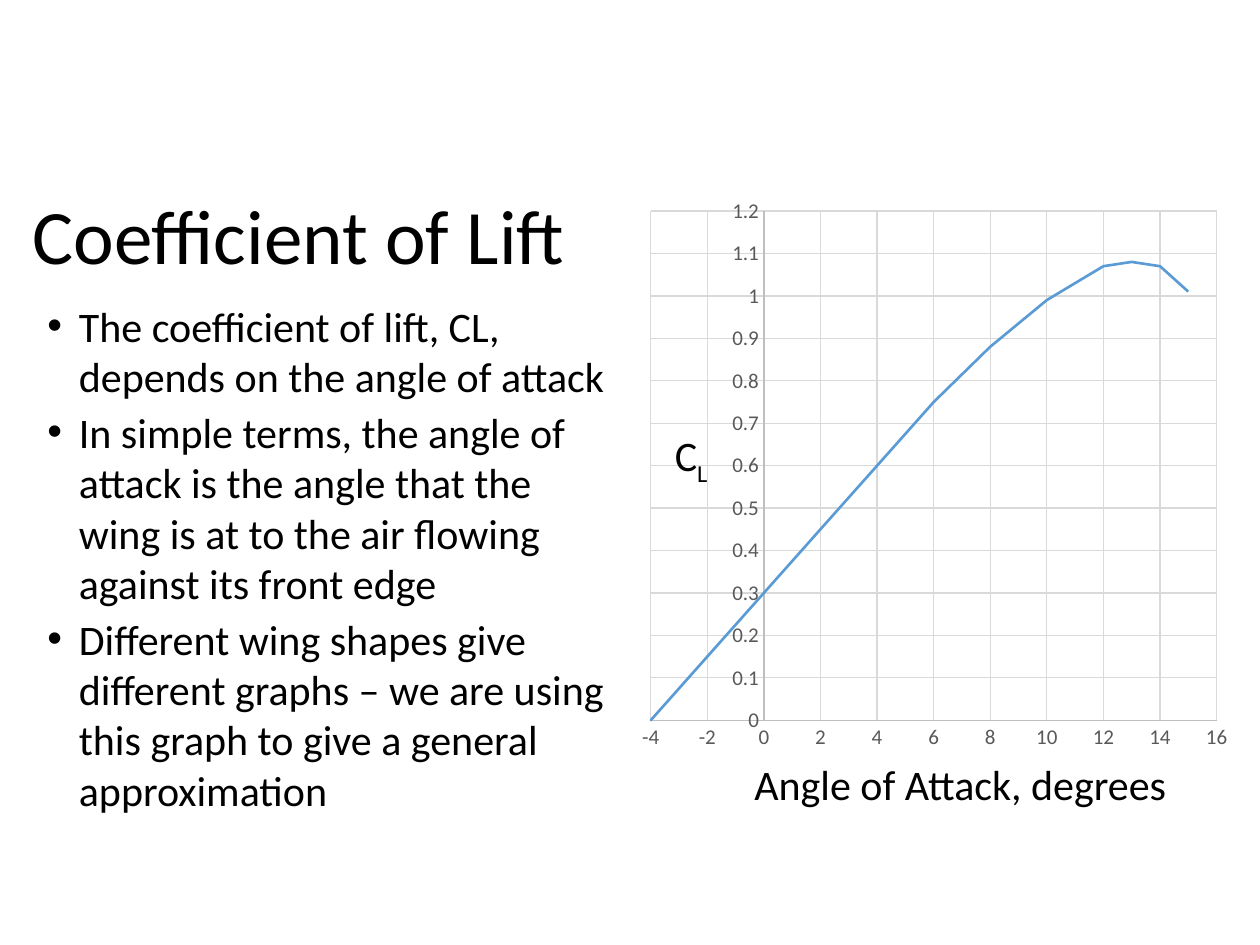
from lxml import etree
from pptx import Presentation
from pptx.chart.data import XyChartData
from pptx.dml.color import RGBColor
from pptx.enum.chart import XL_CHART_TYPE, XL_TICK_MARK
from pptx.enum.text import MSO_ANCHOR
from pptx.oxml import parse_xml
from pptx.oxml.ns import nsdecls, qn
from pptx.util import Pt

SCATTER_LINES = XL_CHART_TYPE.XY_SCATTER_LINES_NO_MARKERS
NO_TICKS = XL_TICK_MARK.NONE
TOP, MIDDLE = MSO_ANCHOR.TOP, MSO_ANCHOR.MIDDLE

BLACK = RGBColor(0x00, 0x00, 0x00)
LABEL_GREY = RGBColor(0x59, 0x59, 0x59)
AXIS_GREY = RGBColor(0xBF, 0xBF, 0xBF)
GRID_GREY = RGBColor(0xD9, 0xD9, 0xD9)
CURVE_BLUE = RGBColor(0x5B, 0x9B, 0xD5)
FONT = "Calibri"

POINTS = [
    "The coefficient of lift, CL, depends on the angle of attack",
    "In simple terms, the angle of attack is the angle that the wing is at "
    "to the air flowing against its front edge",
    "Different wing shapes give different graphs – we are using this graph "
    "to give a general approximation",
]
# (angle of attack in degrees, coefficient of lift)
LIFT_CURVE = [
    (0, 0.3), (-4, 0), (-2, 0.15), (0, 0.3), (2, 0.45), (4, 0.6), (6, 0.75),
    (8, 0.88), (10, 0.99), (12, 1.07), (13, 1.08), (14, 1.07), (15, 1.01),
]
# Inner plot area as fractions of the chart
PLOT_AREA = {"x": 0.034, "y": 0.043, "w": 0.928, "h": 0.886}


def style_font(font, size, color):
    font.name = FONT
    font.size = Pt(size)
    font.color.rgb = color


def add_text(slide, box, lines, size, anchor=TOP):
    frame = slide.shapes.add_textbox(*map(Pt, box)).text_frame
    frame.word_wrap = True
    frame.vertical_anchor = anchor
    frame.text = "\n".join(lines)
    for paragraph in frame.paragraphs:
        for run in paragraph.runs:
            style_font(run.font, size, BLACK)
    return frame


def add_bullets(slide, box, lines, size):
    frame = add_text(slide, box, lines, size)
    for index, paragraph in enumerate(frame.paragraphs):
        properties = paragraph._p.get_or_add_pPr()
        properties.set("marL", str(Pt(18)))
        properties.set("indent", str(-Pt(18)))
        etree.SubElement(properties, qn("a:buFont"), typeface="Arial")
        etree.SubElement(properties, qn("a:buChar"), char="•")
        if index:
            paragraph.space_before = Pt(3)


def add_lift_label(slide, box, size):
    """Add C with a subscript L."""
    paragraph = add_text(slide, box, ["C"], size).paragraphs[0]
    subscript = paragraph.add_run()
    subscript.text = "L"
    style_font(subscript.font, size, BLACK)
    subscript.font._element.set("baseline", "-25000")


def style_axis(axis, minimum, maximum, step, number_format):
    axis.minimum_scale = minimum
    axis.maximum_scale = maximum
    axis.major_unit = step
    axis.major_tick_mark = axis.minor_tick_mark = NO_TICKS
    axis.has_major_gridlines = True
    lines = ((axis.format.line, AXIS_GREY),
             (axis.major_gridlines.format.line, GRID_GREY))
    for line, color in lines:
        line.color.rgb = color
        line.width = Pt(0.75)
    axis.tick_labels.number_format = number_format
    axis.tick_labels.number_format_is_linked = False
    style_font(axis.tick_labels.font, 12, LABEL_GREY)


def fix_plot_area(chart):
    plot_area = chart._chartSpace.chart.plotArea
    for layout in plot_area.findall(qn("c:layout")):
        plot_area.remove(layout)
    modes = '<c:xMode val="edge"/><c:yMode val="edge"/>'
    sizes = "".join(f'<c:{side} val="{part}"/>' for side, part in PLOT_AREA.items())
    plot_area.insert(0, parse_xml(
        f'<c:layout {nsdecls("c")}><c:manualLayout><c:layoutTarget val="inner"/>'
        f"{modes}{sizes}</c:manualLayout></c:layout>"))


def add_lift_chart(slide, box):
    data = XyChartData()
    curve_data = data.add_series("Series 1")
    for angle, lift in LIFT_CURVE:
        curve_data.add_data_point(angle, lift)
    chart = slide.shapes.add_chart(SCATTER_LINES, *map(Pt, box), data).chart
    chart.has_legend = False
    chart.has_title = False
    style_font(chart.font, 10, BLACK)
    style_axis(chart.category_axis, -4, 16, 2, "General")
    style_axis(chart.value_axis, 0, 1.2, 0.1, "General")
    fix_plot_area(chart)
    chart.plots[0].vary_by_categories = False
    curve = chart.plots[0].series[0]
    curve.smooth = False
    curve.format.line.color.rgb = CURVE_BLUE
    curve.format.line.width = Pt(1.5)


def main():
    presentation = Presentation()
    presentation.slide_width, presentation.slide_height = Pt(720), Pt(540)
    slide = presentation.slides.add_slide(presentation.slide_layouts[6])

    title = add_text(slide, (11.5, 105, 620.5, 64), ["Coefficient of Lift"], 44, MIDDLE)
    title.paragraphs[0].line_spacing = 0.9
    add_lift_chart(slide, (360, 106.5, 348.5, 328.5))
    add_lift_label(slide, (378.5, 242, 37.5, 36), 24)
    add_text(slide, (424, 430, 258, 36), ["Angle of Attack, degrees"], 24)
    add_bullets(slide, (20, 168, 340, 289.5), POINTS, 24)

    presentation.save("out.pptx")


if __name__ == "__main__":
    main()
